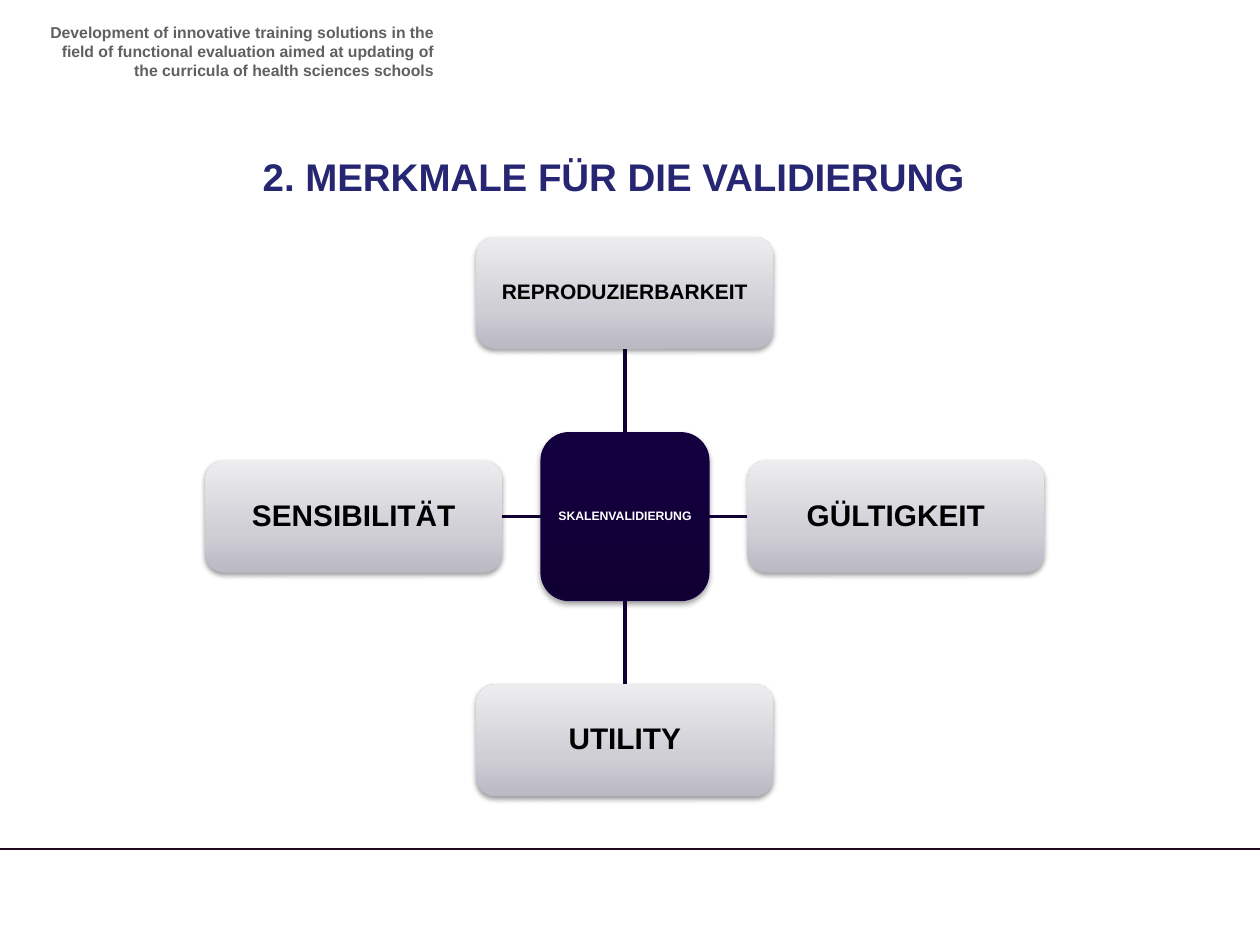
import pptx
import pptx.dml.color
import pptx.enum.shapes
import pptx.enum.text
import pptx.oxml
import pptx.oxml.ns
import pptx.util

ALIGN = pptx.enum.text.PP_ALIGN
ANCHOR = pptx.enum.text.MSO_ANCHOR
WIDTH, HEIGHT = pptx.util.Inches(10), pptx.util.Inches(7.5)
SILVER = [(0, "BAB9C4"), (35, "CFCED5"), (100, "EDEDEF")]
NAVY = [(0, "0F0031"), (80, "13003F"), (100, "13003F")]
NODES = [
    ("REPRODUZIERBARKEIT", 12, 0, -1),
    ("GÜLTIGKEIT", 17, 1, 0),
    ("UTILITY", 17, 0, 1),
    ("SENSIBILITÄT", 17, -1, 0),
]


def color(value):
    """Turn a hex string into a colour."""
    return pptx.dml.color.RGBColor.from_string(value)


def area(left, top, width, height):
    """Turn percentages of the slide into a box."""
    shares = ((left, WIDTH), (top, HEIGHT), (width, WIDTH), (height, HEIGHT))
    return tuple(round(share * side / 100) for share, side in shares)


def assign(target, values):
    """Set every attribute listed in a dict."""
    for name, value in values.items():
        setattr(target, name, value)


def write(shape, text, size, tint, align=ALIGN.CENTER, spacing=1.0, **frame_format):
    """Put one bold paragraph into a shape."""
    frame = shape.text_frame
    assign(frame, {"word_wrap": True, **frame_format})
    para = frame.paragraphs[0]
    assign(para, {"alignment": align, "line_spacing": spacing})
    span = para.add_run()
    span.text = text
    assign(span.font, {"name": "Arial", "size": pptx.util.Pt(size), "bold": True})
    span.font.color.rgb = color(tint)


def add_line(page, start, end, tint, weight):
    """Draw a straight line without a shadow."""
    line = page.shapes.add_connector(
        pptx.enum.shapes.MSO_CONNECTOR.STRAIGHT, *start, *end)
    line.line.color.rgb = color(tint)
    line.line.width = pptx.util.Pt(weight)
    properties = line._element.spPr
    properties.append(properties.makeelement(pptx.oxml.ns.qn("a:effectLst"), {}))


def fill_gradient(shape, stops):
    """Fill a shape with colour stops running from bottom to top."""
    shape.fill.gradient()
    shape.fill.gradient_angle = 90
    stop_list = shape._element.spPr.find(".//" + pptx.oxml.ns.qn("a:gsLst"))
    stop_list.clear()
    for position, tint in stops:
        stop_list.append(pptx.oxml.parse_xml(
            f'<a:gs {pptx.oxml.ns.nsdecls("a")} pos="{position * 1000}">'
            f'<a:srgbClr val="{tint}"/></a:gs>'))


def add_shadow(shape, distance, opacity):
    """Give a shape a soft black shadow below it."""
    shape.shadow.inherit = False
    effects = shape._element.spPr.find(pptx.oxml.ns.qn("a:effectLst"))
    effects.append(pptx.oxml.parse_xml(
        f'<a:outerShdw {pptx.oxml.ns.nsdecls("a")} blurRad="{pptx.util.Pt(3.1)}" '
        f'dist="{pptx.util.Pt(distance)}" dir="5400000" rotWithShape="0">'
        f'<a:srgbClr val="000000"><a:alpha val="{opacity * 1000}"/></a:srgbClr>'
        '</a:outerShdw>'))


def add_card(page, center, size, text, points, tint, stops, distance, opacity, edge=None):
    """Draw a labelled rounded card around a centre point."""
    corner = [round(middle - side / 2) for middle, side in zip(center, size)]
    card = page.shapes.add_shape(
        pptx.enum.shapes.MSO_SHAPE.ROUNDED_RECTANGLE, *corner, *size)
    fill_gradient(card, stops)
    if edge:
        card.line.color.rgb = color(edge)
        card.line.width = pptx.util.Pt(0.75)
    else:
        card.line.fill.background()
    add_shadow(card, distance, opacity)
    margins = dict.fromkeys(
        ("margin_left", "margin_right", "margin_top", "margin_bottom"),
        pptx.util.Inches(0.05))
    write(card, text, points, tint, spacing=0.9,
          vertical_anchor=ANCHOR.MIDDLE, **margins)


def add_header(page, box):
    """Write the project name in the top corner."""
    header = page.shapes.add_textbox(*box)
    write(header, "Development of innovative training solutions in the ﬁeld of "
          "functional evaluation aimed at updating of the curricula of health "
          "sciences schools", 9, "606060", ALIGN.RIGHT)


def add_title(page, box):
    """Place and format the slide title."""
    title = page.shapes.title
    assign(title, dict(zip(("left", "top", "width", "height"), box)))
    write(title, "2. MERKMALE FÜR DIE VALIDIERUNG", 22, "262673",
          vertical_anchor=ANCHOR.MIDDLE)


def add_diagram(page, box):
    """Draw the hub with its four criteria around it."""
    left, top, width, height = box
    center = (left + width // 2, top + height // 2)
    hub = (round(width * 0.2), round(height * 0.3))
    node = (round(width * 0.354), round(height * 0.2))
    reach = ((width - node[0]) / 2, (height - node[1]) / 2)
    add_card(page, center, hub, "SKALENVALIDIERUNG", 7, "FFFFFF", NAVY, 1.8, 35, "140040")
    for text, points, *direction in NODES:
        axes = list(zip(center, direction, hub, node, reach))
        middle = [round(mid + way * far) for mid, way, _, _, far in axes]
        start = [round(mid + way * inner / 2) for mid, way, inner, _, _ in axes]
        end = [round(mid + way * (far - outer / 2)) for mid, way, _, outer, far in axes]
        add_line(page, start, end, "100034", 2)
        add_card(page, middle, node, text, points, "000000", SILVER, 1.6, 38)


def add_footer_rule(page, box):
    """Draw the rule above the footer."""
    left, top, width, _ = box
    add_line(page, (left, top), (left + width, top), "200A20", 1)


def main():
    """Build and save the slide."""
    deck = pptx.Presentation()
    assign(deck, {"slide_width": WIDTH, "slide_height": HEIGHT})
    page = deck.slides.add_slide(deck.slide_layouts[5])
    add_footer_rule(page, area(-0.5, 89.87, 100.5, 0))
    add_header(page, area(2.8, 1.73, 32.6, 6.27))
    add_title(page, area(5.8, 15.5, 85.8, 6.27))
    add_diagram(page, area(16.3, 25.07, 66.6, 59.2))
    deck.save("out.pptx")


if __name__ == "__main__":
    main()
